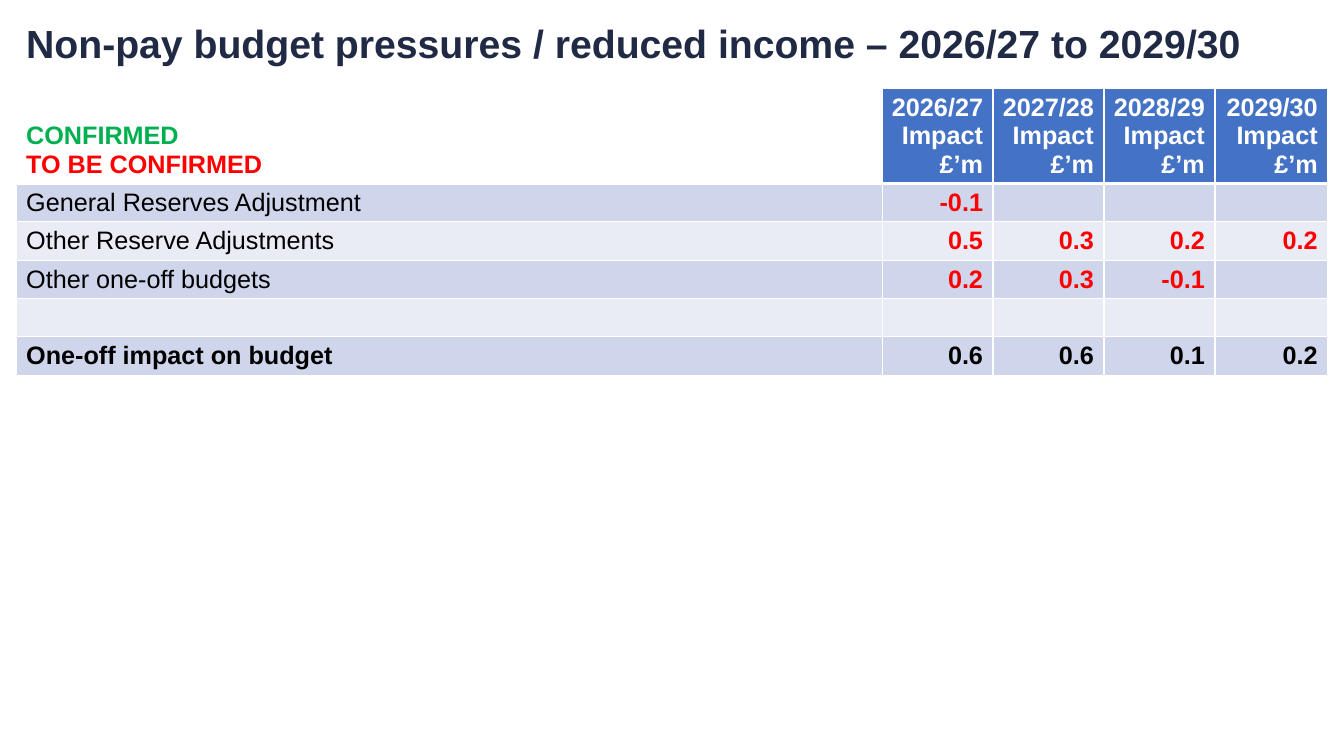
from typing import NamedTuple

from lxml import etree
from pptx import Presentation
from pptx.dml.color import RGBColor
from pptx.enum.text import MSO_ANCHOR as Anchor, MSO_AUTO_SIZE as AutoSize, PP_ALIGN as Align
from pptx.oxml.ns import qn
from pptx.util import Inches, Pt

FONT = "Arial"
TABLE_TEXT_SIZE = 18
NAVY, BLACK, WHITE = "202A44", "000000", "FFFFFF"
GREEN, RED, HEADER_BLUE = "00B050", "FF0000", "4472C4"
BANDS = ("CFD5EA", "E9EBF5")
COLUMN_WIDTHS = (8.59, 1.1, 1.1, 1.1, 1.12)
HEADER_HEIGHT, ROW_HEIGHT = 0.93, 0.38
YEARS = ("2026/27", "2027/28", "2028/29", "2029/30")


class Line(NamedTuple):
    text: str
    color: str
    bold: bool = True


class BudgetRow(NamedTuple):
    label: str
    values: tuple[str, ...]
    is_total: bool = False


BUDGET_ROWS = (
    BudgetRow("General Reserves Adjustment", ("-0.1", "", "", "")),
    BudgetRow("Other Reserve Adjustments", ("0.5", "0.3", "0.2", "0.2")),
    BudgetRow("Other one-off budgets", ("0.2", "0.3", "-0.1", "")),
    BudgetRow("", ("", "", "", "")),
    BudgetRow("One-off impact on budget", ("0.6", "0.6", "0.1", "0.2"), is_total=True),
)


def rgb(color: str) -> RGBColor:
    return RGBColor.from_string(color)


def add_run(paragraph, line: Line, size: float) -> None:
    run = paragraph.add_run()
    run.text = line.text
    run.font.name = FONT
    run.font.size = Pt(size)
    run.font.bold = line.bold
    run.font.color.rgb = rgb(line.color)


def set_empty_font(paragraph, size: int) -> None:
    """Give a paragraph without text its font, so that its row keeps its height."""
    properties = etree.SubElement(paragraph._p, qn("a:endParaRPr"), sz=str(size * 100))
    etree.SubElement(properties, qn("a:latin"), typeface=FONT)


def set_borders(cell, top: float = 1, bottom: float = 1) -> None:
    """Draw white borders, given in points, on all four sides."""
    properties = cell._tc.get_or_add_tcPr()
    sides = (("a:lnL", 1), ("a:lnR", 1), ("a:lnT", top), ("a:lnB", bottom))
    for index, (tag, width) in enumerate(sides):
        border = etree.Element(qn(tag), w=str(Pt(width)))
        fill = etree.SubElement(border, qn("a:solidFill"))
        etree.SubElement(fill, qn("a:srgbClr"), val=WHITE)
        properties.insert(index, border)


def fill_cell(cell, lines: list[Line], fill: str, align: Align) -> None:
    cell.fill.solid()
    cell.fill.fore_color.rgb = rgb(fill)
    if align == Align.RIGHT:
        cell.margin_left = Inches(0.05)  # keeps each year on one line
    for index, line in enumerate(lines):
        frame = cell.text_frame
        paragraph = frame.add_paragraph() if index else frame.paragraphs[0]
        paragraph.alignment = align
        if line.text:
            add_run(paragraph, line, TABLE_TEXT_SIZE)
        else:
            set_empty_font(paragraph, TABLE_TEXT_SIZE)


def add_title(slide, text: str) -> None:
    title = slide.shapes.title
    title.left, title.top = Inches(0.16), Inches(0.04)
    title.width, title.height = Inches(12.42), Inches(0.82)
    frame = title.text_frame
    frame.word_wrap = True
    frame.auto_size = AutoSize.NONE
    frame.vertical_anchor = Anchor.MIDDLE
    paragraph = frame.paragraphs[0]
    paragraph.alignment = Align.LEFT
    paragraph.line_spacing = 0.9
    add_run(paragraph, Line(text, NAVY), 28)


def add_budget_table(slide) -> None:
    height = HEADER_HEIGHT + ROW_HEIGHT * len(BUDGET_ROWS)
    table = slide.shapes.add_table(
        len(BUDGET_ROWS) + 1, len(COLUMN_WIDTHS),
        Inches(0.16), Inches(0.88), Inches(sum(COLUMN_WIDTHS)), Inches(height),
    ).table
    for column, width in zip(table.columns, COLUMN_WIDTHS):
        column.width = Inches(width)
    for index, row in enumerate(table.rows):
        row.height = Inches(ROW_HEIGHT if index else HEADER_HEIGHT)

    # Header: status key and years
    key = table.cell(0, 0)
    fill_cell(key, [Line("CONFIRMED", GREEN), Line("TO BE CONFIRMED", RED)], WHITE, Align.LEFT)
    key.vertical_anchor = Anchor.BOTTOM
    for column, year in enumerate(YEARS, 1):
        lines = [Line(text, WHITE) for text in (year, "Impact", "£’m")]
        fill_cell(table.cell(0, column), lines, HEADER_BLUE, Align.RIGHT)

    # Budget lines and total
    for index, row in enumerate(BUDGET_ROWS):
        band = BANDS[index % 2]
        label = Line(row.label, BLACK, row.is_total)
        fill_cell(table.cell(index + 1, 0), [label], band, Align.LEFT)
        for column, value in enumerate(row.values, 1):
            line = Line(value, BLACK if row.is_total else RED)
            fill_cell(table.cell(index + 1, column), [line], band, Align.RIGHT)

    # Borders, heavier under the header
    for index, row in enumerate(table.rows):
        for cell in row.cells:
            set_borders(cell, top=3 if index == 1 else 1, bottom=3 if index == 0 else 1)


def main() -> None:
    presentation = Presentation()
    presentation.slide_width, presentation.slide_height = Inches(13.33), Inches(7.5)
    slide = presentation.slides.add_slide(presentation.slide_layouts[5])
    add_title(slide, "Non-pay budget pressures / reduced income – 2026/27 to 2029/30")
    add_budget_table(slide)
    presentation.save("out.pptx")


if __name__ == "__main__":
    main()
